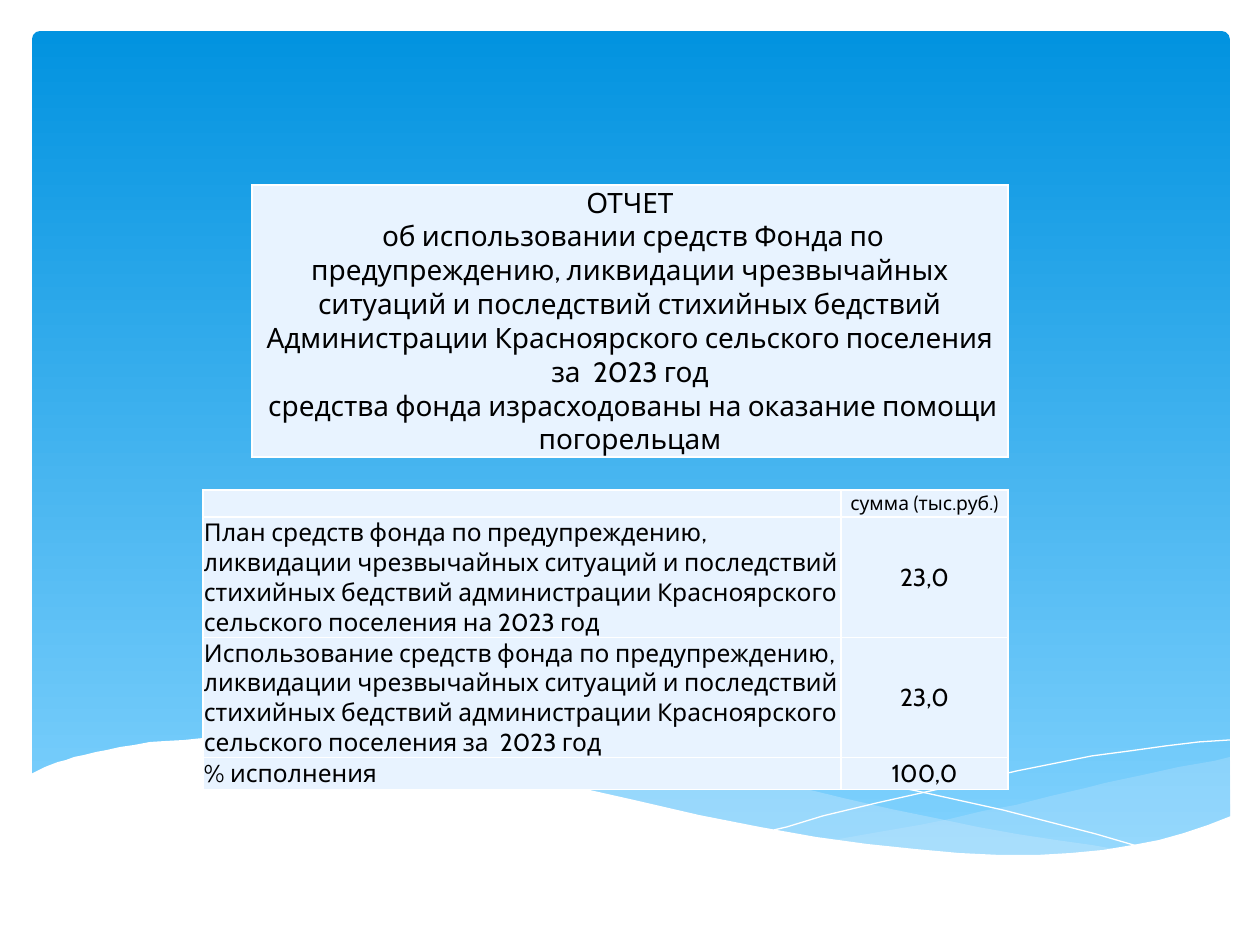
from lxml import etree
from pptx import Presentation
from pptx.dml.color import RGBColor
from pptx.enum.shapes import MSO_SHAPE as SHAPE
from pptx.enum.text import MSO_ANCHOR as ANCHOR, PP_ALIGN as ALIGN
from pptx.oxml.ns import qn
from pptx.util import Pt

PX = 914400 / 126
COLORS = {"sky_top": "0293E0", "sky_bottom": "83D3FE", "wave": "C6E7FC",
          "white": "FFFFFF", "cell": "E8F3FF", "text": "000000"}
RGB = {name: RGBColor.from_string(value) for name, value in COLORS.items()}


def add_wave(points, fill=None, opacity=100):
    builder = slide.shapes.build_freeform(*points[0], scale=PX)
    builder.add_line_segments(points[1:], close=fill is not None)
    wave = builder.convert_to_shape()
    wave.shadow.inherit = False
    if fill is None:
        wave.fill.background()
        wave.line.color.rgb = RGB["white"]
        wave.line.width = Pt(0)
        return
    wave.line.fill.background()
    wave.fill.solid()
    wave.fill.fore_color.rgb = RGB[fill]
    if opacity < 100:
        color = wave.fill._xPr.find(qn("a:solidFill"))[0]
        etree.SubElement(color, qn("a:alpha"), val=str(opacity * 1000))


def add_grid(left, top, widths, heights, rows):
    box = [round(v * PX) for v in (left, top, sum(widths), sum(heights))]
    table = slide.shapes.add_table(len(heights), len(widths), *box).table
    table.first_row = table.horz_banding = False
    for column, width in zip(table.columns, widths):
        column.width = round(width * PX)
    for row, height, contents in zip(table.rows, heights, rows):
        row.height = round(height * PX)
        for cell, (text, size, align, anchor) in zip(row.cells, contents):
            cell.margin_left = cell.margin_right = cell.margin_top = round(PX)
            cell.margin_bottom = 0
            cell.vertical_anchor = anchor
            paragraph = cell.text_frame.paragraphs[0]
            paragraph.alignment = align
            for index, line in enumerate(text.split("\n") if text else []):
                if index:
                    paragraph.add_line_break()
                run = paragraph.add_run()
                run.text = line
                run.font.size = Pt(size)
                run.font.name = "Cabin"
                run.font.color.rgb = RGB["text"]
            paragraph._p.get_or_add_endParaRPr().set("sz", str(size * 100))
            properties = cell._tc.get_or_add_tcPr()
            for side in ("a:lnL", "a:lnR", "a:lnT", "a:lnB"):
                border = etree.SubElement(properties, qn(side), w="12700")
                paint = etree.SubElement(border, qn("a:solidFill"))
                etree.SubElement(paint, qn("a:srgbClr"), val=COLORS["white"])
            cell.fill.solid()
            cell.fill.fore_color.rgb = RGB["cell"]


prs = Presentation()
prs.slide_width = round(1260 * PX)
prs.slide_height = round(945 * PX)
slide = prs.slides.add_slide(prs.slide_layouts[6])

sky = slide.shapes.add_shape(
    SHAPE.ROUNDED_RECTANGLE, *[round(v * PX) for v in (32, 31, 1198, 832)])
sky.adjustments[0] = 0.01
sky.shadow.inherit = False
sky.line.fill.background()
sky.fill.gradient()
sky.fill.gradient_angle = 270
for stop, position, name in zip(sky.fill.gradient_stops, (0, 1), ("sky_top", "sky_bottom")):
    stop.position = position
    stop.color.rgb = RGB[name]

right_wave = [
    (1230, 757), (1214, 761), (1179, 767), (1143, 775), (1105, 783), (1086, 788),
    (1051, 796), (1016, 805), (983, 811), (950, 819), (920, 825), (891, 830),
    (862, 835), (834, 840), (872, 845), (906, 849), (939, 853), (970, 855),
    (999, 856), (1027, 857), (1053, 856), (1077, 855), (1100, 853), (1121, 850),
    (1143, 845), (1162, 840), (1180, 835), (1198, 830), (1215, 824), (1231, 818)]
middle_wave = [
    (1126, 851), (1092, 845), (1056, 840), (1017, 834), (978, 827), (935, 818),
    (891, 809), (843, 798), (794, 786), (755, 776), (718, 769), (682, 762),
    (649, 756), (616, 751), (586, 747), (557, 745), (529, 742), (504, 741),
    (479, 740), (456, 740), (435, 741), (413, 742), (396, 743), (378, 745),
    (362, 747), (384, 750), (407, 753), (432, 757), (457, 762), (483, 767),
    (510, 772), (538, 779), (567, 786), (619, 799), (668, 809), (714, 819),
    (758, 828), (800, 835), (839, 842), (877, 847), (911, 851), (944, 854),
    (975, 856), (1004, 857), (1032, 857), (1057, 857), (1082, 856), (1105, 854)]
falling_line = [
    (391, 752), (414, 748), (445, 745), (472, 743), (507, 742), (546, 742),
    (591, 743), (644, 747), (702, 753), (767, 763), (839, 775), (917, 791),
    (1003, 810), (1096, 834), (1144, 848)]
rising_line = [
    (774, 830), (787, 827), (823, 816), (877, 803), (944, 788), (1017, 771),
    (1092, 756), (1130, 751), (1166, 746), (1199, 742), (1230, 740)]
white_wave = [
    (1231, 816), (1208, 825), (1184, 833), (1159, 840), (1133, 845), (1103, 850),
    (1071, 853), (1037, 855), (1000, 855), (959, 853), (915, 849), (867, 844),
    (816, 837), (760, 827), (699, 815), (634, 800), (563, 784), (527, 775),
    (493, 767), (460, 761), (428, 755), (398, 750), (368, 746), (341, 743),
    (315, 741), (290, 740), (266, 738), (203, 738), (184, 740), (166, 741),
    (150, 742), (134, 745), (120, 747), (107, 750), (96, 752), (84, 755),
    (74, 757), (66, 760), (58, 762), (50, 765), (45, 767), (37, 771),
    (29, 775), (29, 921), (1231, 921)]

add_wave(right_wave, "wave", 29)
add_wave(middle_wave, "wave", 40)
add_wave(falling_line)
add_wave(rising_line)
add_wave(white_wave, "white")

fund = ("средств фонда по предупреждению, ликвидации чрезвычайных ситуаций и последствий "
        "стихийных бедствий администрации Красноярского сельского поселения")
left_middle = (14, ALIGN.LEFT, ANCHOR.MIDDLE)
centered = (14, ALIGN.CENTER, ANCHOR.MIDDLE)
add_grid(203, 490, [638, 167], [27, 120, 120, 32], [
    [("", 11, ALIGN.LEFT, ANCHOR.TOP),
     ("сумма (тыс.руб.)", 11, ALIGN.CENTER, ANCHOR.MIDDLE)],
    [(f"План {fund} на 2023 год", 14, ALIGN.LEFT, ANCHOR.TOP), ("23,0", *centered)],
    [(f"Использование {fund} за  2023 год", *left_middle), ("23,0", *centered)],
    [("% исполнения", *left_middle), ("100,0", *centered)],
])

report_title = (
    "ОТЧЕТ\n об использовании средств Фонда по предупреждению, ликвидации чрезвычайных "
    "ситуаций и последствий стихийных бедствий Администрации Красноярского сельского "
    "поселения за  2023 год\n средства фонда израсходованы на оказание помощи погорельцам")
add_grid(252, 185, [756], [272], [[(report_title, 16, ALIGN.CENTER, ANCHOR.MIDDLE)]])

prs.save("out.pptx")
